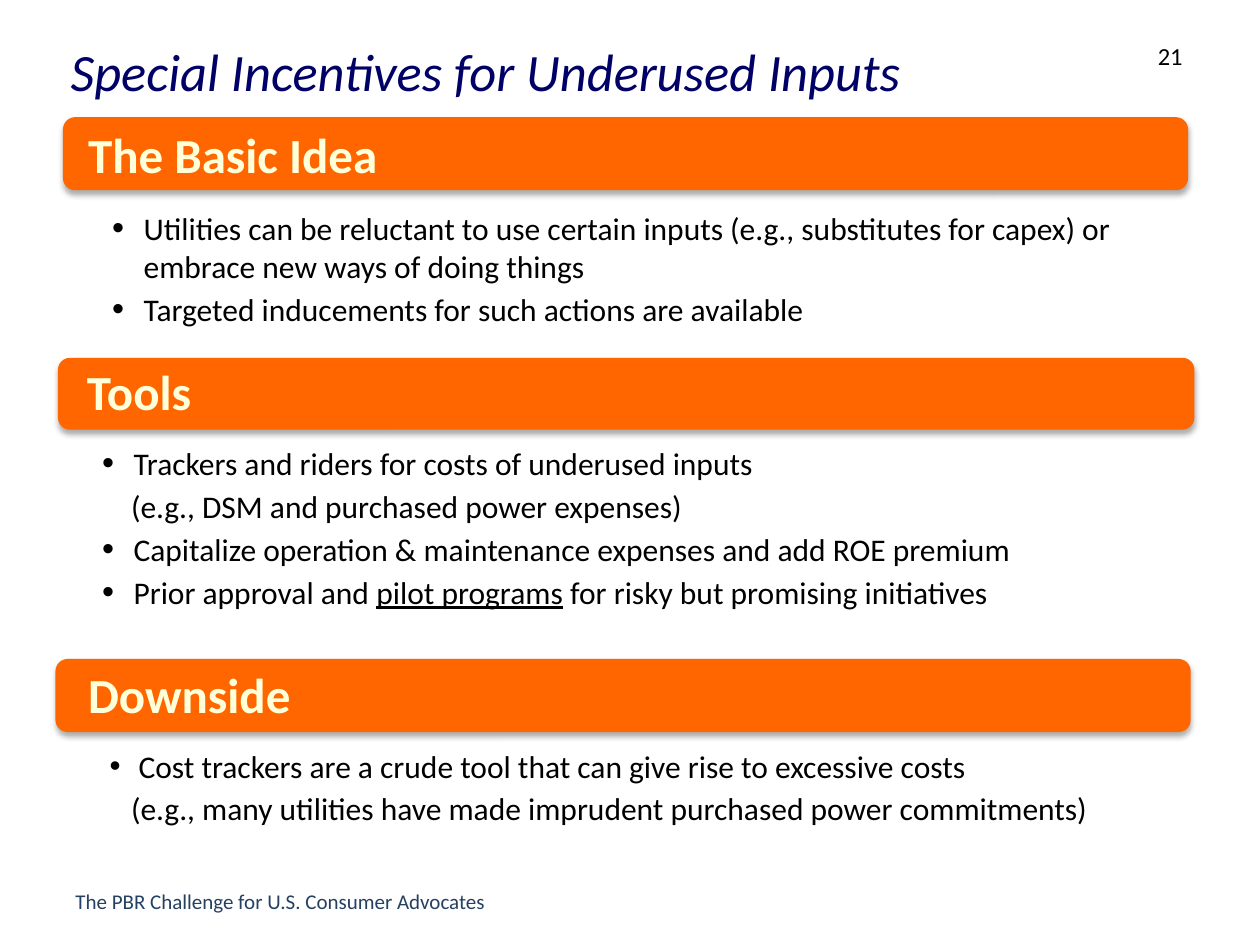
import pptx
import pptx.dml.color
import pptx.enum.shapes
import pptx.enum.text
import pptx.oxml
import pptx.util
from dataclasses import dataclass

Inches = pptx.util.Inches
Pt = pptx.util.Pt
Anchor = pptx.enum.text.MSO_ANCHOR
Align = pptx.enum.text.PP_ALIGN
NS = 'xmlns:a="http://schemas.openxmlformats.org/drawingml/2006/main"'
SHADE = (f'<a:outerShdw {NS} blurRad="44450" dist="27940" dir="5400000" rotWithShape="0">'
         '<a:srgbClr val="000000"><a:alpha val="32000"/></a:srgbClr></a:outerShdw>')


@dataclass
class Theme:
    face: str = "Calibri"
    ink: str = "000000"
    navy: str = "000066"
    slate: str = "254061"
    cream: str = "FFFFD9"
    orange: str = "FF6600"
    title: int = 30
    head: int = 28
    body: int = 18
    page: int = 14
    foot: int = 12


class Deck:
    """Holds the theme and the current slide, and draws each kind of element."""

    def __init__(self, theme):
        self.theme = theme
        self.file = pptx.Presentation()
        self.file.slide_width, self.file.slide_height = Inches(10), Inches(7.5)
        self.slide = self.file.slides.add_slide(self.file.slide_layouts[4])
        self.holders = {h.placeholder_format.idx: h for h in self.slide.placeholders}

    def apply(self, item, values):
        for name, value in values.items():
            setattr(item, name, value)

    def place(self, shape, box):
        self.apply(shape, dict(zip(("left", "top", "width", "height"), map(Inches, box))))

    def frame(self, shape, pads=(0.1, 0.05, 0.1, 0.05), anchor=Anchor.TOP):
        left, top, right, bottom = map(Inches, pads)
        self.apply(shape.text_frame, {
            "word_wrap": True, "auto_size": pptx.enum.text.MSO_AUTO_SIZE.NONE,
            "vertical_anchor": anchor, "margin_left": left, "margin_top": top,
            "margin_right": right, "margin_bottom": bottom})
        return shape.text_frame

    def style(self, para, size, color, bold=False, italic=False):
        for item in para.runs:
            self.apply(item.font, {"name": self.theme.face, "size": Pt(size),
                                   "bold": bold, "italic": italic})
            item.font.color.rgb = pptx.dml.color.RGBColor.from_string(color)

    def title(self, text, box):
        shape = self.holders[0]
        self.place(shape, box)
        para = self.frame(shape, anchor=Anchor.MIDDLE).paragraphs[0]
        para.text, para.alignment = text, Align.LEFT
        self.style(para, self.theme.title, self.theme.navy, italic=True)

    def label(self, text, box, size, color, bold=False, **frame):
        shape = self.slide.shapes.add_textbox(*map(Inches, box))
        para = self.frame(shape, **frame).paragraphs[0]
        para.text = text
        self.style(para, size, color, bold)
        return para

    def banner(self, text, bar, box):
        shape = self.slide.shapes.add_shape(
            pptx.enum.shapes.MSO_SHAPE.ROUNDED_RECTANGLE, *map(Inches, bar))
        shape.fill.solid()
        shape.fill.fore_color.rgb = pptx.dml.color.RGBColor.from_string(self.theme.orange)
        shape.line.fill.background()
        shape.shadow.inherit = False
        shape._element.spPr.effectLst.append(pptx.oxml.parse_xml(SHADE)) if hasattr(
            shape._element.spPr, "effectLst") else None
        para = self.label(text, box, self.theme.head, self.theme.cream, True,
                          pads=(0.12,) * 4, anchor=Anchor.MIDDLE)
        para.line_spacing = 0.9

    def bullet(self, para, left, hang, scale):
        props = para._p.get_or_add_pPr()
        for name, value in {"marL": left, "indent": -hang}.items():
            props.set(name, str(Inches(value)))
        marks = (f'<a:buSzPct {NS} val="{scale}000"/>', f'<a:buFont {NS} typeface="Arial"/>',
                 f'<a:buChar {NS} char="•"/>') if hang else (f'<a:buNone {NS}/>',)
        for mark in marks:
            props.append(pptx.oxml.parse_xml(mark))

    def points(self, slot, box, lines, hang, scale, line=1.0, before=0, after=0):
        shape = self.holders[slot]
        self.place(shape, box)
        frame = self.frame(shape, (0.3, 0.03, 0.19, 0.03))
        for row, (left, mark, text) in enumerate(lines):
            para = frame.add_paragraph() if row else frame.paragraphs[0]
            self.bullet(para, left, hang if mark else 0, scale)
            self.apply(para, {"line_spacing": line, "space_after": Pt(after),
                              "space_before": Pt(before if row else 0),
                              "alignment": Align.LEFT})
            for part, words in enumerate(text.split("|")):
                run = para.add_run()
                run.text = words
                run.font.underline = part % 2 == 1
            self.style(para, self.theme.body, self.theme.ink)

    def drop(self, slot):
        node = self.holders.pop(slot)._element
        node.getparent().remove(node)


def main():
    theme = Theme()
    deck = Deck(theme)
    deck.title("Special Incentives for Underused Inputs", (0.46, 0.06, 9, 1))
    deck.label("21", (9.09, 0.28, 0.82, 0.25), theme.page, theme.ink)
    for text, bar, box in (
            ("The Basic Idea", (0.5, 0.93, 8.93, 0.58), (0.58, 0.93, 8.86, 0.64)),
            ("Tools", (0.46, 2.84, 9.02, 0.57), (0.57, 2.86, 8.95, 0.55)),
            ("Downside", (0.44, 5.23, 9.01, 0.58), (0.58, 5.29, 8.94, 0.49))):
        deck.banner(text, bar, box)
    deck.points(1, (0.59, 1.63, 9, 0.95), (
        (0.25, True, "Utilities can be reluctant to use certain inputs (e.g., substitutes "
                     "for capex) or embrace new ways of doing things"),
        (0.25, True, "Targeted inducements for such actions are available"),
    ), hang=0.25, scale=109, after=3)
    deck.points(2, (0.26, 3.49, 9.17, 1.38), (
        (0.5, True, "Trackers and riders for costs of underused inputs"),
        (0.48, False, "(e.g., DSM and purchased power expenses)"),
        (0.5, True, "Capitalize operation & maintenance expenses and add ROE premium"),
        (0.5, True, "Prior approval and |pilot programs| for risky but promising initiatives"),
    ), hang=0.25, scale=109, after=3)
    deck.points(3, (0.3, 5.93, 9.41, 0.76), (
        (0.5, True, "Cost trackers are a crude tool that can give rise to excessive costs"),
        (0.44, False, "(e.g., many utilities have made imprudent purchased power commitments)"),
    ), hang=0.23, scale=100, line=0.9, before=4.8)
    deck.drop(4)
    deck.label("The PBR Challenge for U.S. Consumer Advocates", (0.5, 7, 4.08, 0.35),
               theme.foot, theme.slate)
    for slot in [s for s in deck.holders if s >= 10]:
        deck.drop(slot)
    deck.file.save("out.pptx")


if __name__ == "__main__":
    main()
